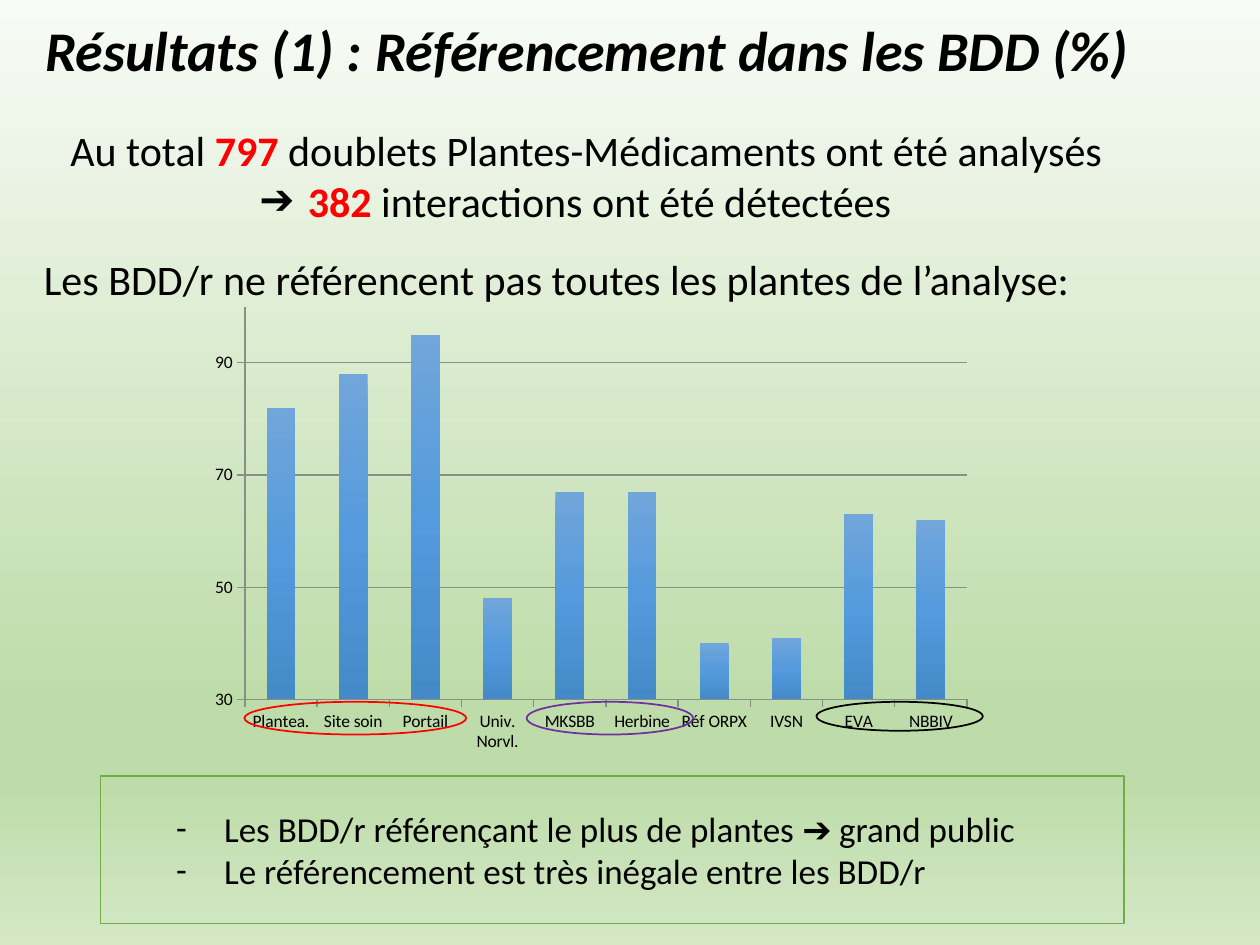
from copy import deepcopy

from lxml.etree import SubElement
from pptx import Presentation
from pptx.chart.data import CategoryChartData
from pptx.dml.color import RGBColor
from pptx.enum.chart import XL_CHART_TYPE as ChartType, XL_TICK_MARK as TickMark
from pptx.enum.shapes import MSO_SHAPE as Preset
from pptx.enum.text import MSO_ANCHOR as Anchor, PP_ALIGN as Align
from pptx.oxml.ns import qn
from pptx.util import Inches, Pt

FONT = "Calibri"
BLACK = RGBColor(0x00, 0x00, 0x00)
RED = RGBColor(0xFF, 0x00, 0x00)
PURPLE = RGBColor(0x70, 0x30, 0xA0)
GREEN = RGBColor(0x70, 0xAD, 0x47)
GREY = RGBColor(0x86, 0x90, 0x86)
PALE = RGBColor(0xF8, 0xFB, 0xF6)
LEAF = RGBColor(0xBE, 0xDC, 0xAA)
MINT = RGBColor(0xD4, 0xE8, 0xC6)
LIGHT_BLUE = RGBColor(0x71, 0xA6, 0xDB)
MID_BLUE = RGBColor(0x54, 0x9A, 0xDC)
DARK_BLUE = RGBColor(0x45, 0x8A, 0xC8)

SITES = {
    "Plantea.": 82, "Site soin": 88, "Portail": 95, "Univ. Norvl.": 48,
    "MKSBB": 67, "Herbine": 67, "Réf ORPX": 40, "IVSN": 41,
    "EVA": 63, "NBBIV": 62,
}


def set_gradient(fill, parent, stops):
    fill.gradient()
    fill.gradient_angle = 270
    stop_list = next(parent.iter(qn("a:gsLst")))
    for _ in stops[2:]:
        stop_list.append(deepcopy(stop_list[0]))
    for stop, (position, color) in zip(fill.gradient_stops, stops):
        stop.position = position
        stop.color.rgb = color


def add_runs(paragraph, parts, size, bold=False, italic=False):
    for text, color in parts:
        run = paragraph.add_run()
        run.text = text
        font = run.font
        font.name, font.size = FONT, Pt(size)
        font.bold = bold or color == RED
        font.italic = italic
        font.color.rgb = color


def set_bullet(paragraph, character, level, left, hanging):
    paragraph.level = level
    properties = paragraph._p.get_or_add_pPr()
    properties.set("marL", str(Inches(left)))
    properties.set("indent", str(-Inches(hanging)))
    SubElement(properties, qn("a:buFont")).set("typeface", FONT)
    SubElement(properties, qn("a:buChar")).set("char", character)


def add_text(slide, box, anchor=Anchor.TOP):
    text_frame = slide.shapes.add_textbox(*map(Inches, box)).text_frame
    text_frame.word_wrap = True
    text_frame.vertical_anchor = anchor
    return text_frame


def add_title(slide, box):
    paragraph = add_text(slide, box, Anchor.MIDDLE).paragraphs[0]
    paragraph.line_spacing = 0.9
    title = "Résultats (1) : Référencement dans les BDD (%)"
    add_runs(paragraph, [(title, BLACK)], 32, bold=True, italic=True)


def add_totals(slide, box):
    text_frame = add_text(slide, box)
    total = text_frame.paragraphs[0]
    detected = text_frame.add_paragraph()
    total.alignment = detected.alignment = Align.JUSTIFY
    add_runs(total, [
        ("Au total ", BLACK), ("797 ", RED),
        ("doublets Plantes-Médicaments ont été analysés", BLACK),
    ], 24)
    set_bullet(detected, "➔", 3, 1.81, 0.31)
    add_runs(detected, [
        (" ", BLACK), ("382", RED),
        (" interactions ont été détectées", BLACK),
    ], 24)


def add_lead(slide, box):
    paragraph = add_text(slide, box).paragraphs[0]
    paragraph.alignment = Align.JUSTIFY
    lead = "Les BDD/r ne référencent pas toutes les plantes de l’analyse:"
    add_runs(paragraph, [(lead, BLACK)], 24)


def set_plot_layout(chart, **fractions):
    plot_area = next(chart.element.iter(qn("c:plotArea")))
    for old in plot_area.findall(qn("c:layout")):
        plot_area.remove(old)
    layout = SubElement(plot_area, qn("c:layout"))
    plot_area.insert(0, layout)
    manual = SubElement(layout, qn("c:manualLayout"))
    settings = {"layoutTarget": "inner", "xMode": "edge", "yMode": "edge", **fractions}
    for name, value in settings.items():
        SubElement(manual, qn(f"c:{name}")).set("val", str(value))


def add_reference_chart(slide, box):
    data = CategoryChartData()
    data.categories = list(SITES)
    data.add_series("Référencement (%)", list(SITES.values()))
    chart = slide.shapes.add_chart(
        ChartType.COLUMN_CLUSTERED, *map(Inches, box), data).chart
    chart.has_legend = False
    chart.has_title = False
    chart.font.name, chart.font.size = FONT, Pt(10)
    chart.font.color.rgb = BLACK
    set_plot_layout(chart, x=0.06, y=0.02, w=0.92, h=0.85)

    plot = chart.plots[0]
    plot.gap_width = 150
    plot.vary_by_categories = False
    series = plot.series[0]
    series.invert_if_negative = False
    set_gradient(series.format.fill, chart.element,
                 [(0, LIGHT_BLUE), (0.5, MID_BLUE), (1, DARK_BLUE)])

    value_axis = chart.value_axis
    value_axis.minimum_scale, value_axis.maximum_scale = 30, 100
    value_axis.major_unit = 20
    value_axis.has_major_gridlines = True
    for axis in (value_axis, chart.category_axis):
        axis.major_tick_mark = TickMark.OUTSIDE
    for line in (value_axis.format.line, chart.category_axis.format.line,
                 value_axis.major_gridlines.format.line):
        line.color.rgb = GREY
        line.width = Pt(0.75)


def add_outline(slide, preset, box, color, width):
    shape = slide.shapes.add_shape(preset, *map(Inches, box))
    shape.shadow.inherit = False
    shape.fill.background()
    shape.line.color.rgb = color
    shape.line.width = Pt(width)
    return shape


def add_conclusions(slide, box):
    text_frame = add_outline(slide, Preset.RECTANGLE, box, GREEN, 0.75).text_frame
    text_frame.word_wrap = True
    text_frame.vertical_anchor = Anchor.MIDDLE
    conclusions = [
        "Les BDD/r référençant le plus de plantes ➔ grand public",
        "Le référencement est très inégale entre les BDD/r",
    ]
    paragraphs = [text_frame.paragraphs[0], text_frame.add_paragraph()]
    for paragraph, conclusion in zip(paragraphs, conclusions):
        paragraph.alignment = Align.JUSTIFY
        set_bullet(paragraph, "-", 1, 0.88, 0.38)
        add_runs(paragraph, [(conclusion, BLACK)], 20)


def add_group_rings(slide, top):
    for left, width, height, color in [
        (1.94, 1.76, 0.26, RED), (4.18, 1.32, 0.26, PURPLE), (6.48, 1.32, 0.23, BLACK),
    ]:
        add_outline(slide, Preset.OVAL, (left, top, width, height), color, 1)


def main():
    presentation = Presentation()
    presentation.slide_width, presentation.slide_height = Inches(10), Inches(7.5)
    slide = presentation.slides.add_slide(presentation.slide_layouts[6])
    set_gradient(slide.background.fill, slide.element,
                 [(0, PALE), (0.74, LEAF), (0.83, LEAF), (1, MINT)])
    add_title(slide, (0.26, 0, 9.26, 0.85))
    add_totals(slide, (0.46, 0.94, 9.18, 0.91))
    add_lead(slide, (0.25, 1.96, 9.44, 0.81))
    add_reference_chart(slide, (1.57, 2.36, 6.23, 3.67))
    add_conclusions(slide, (0.8, 6.16, 8.12, 1.17))
    add_group_rings(slide, 5.57)
    presentation.save("out.pptx")


if __name__ == "__main__":
    main()
